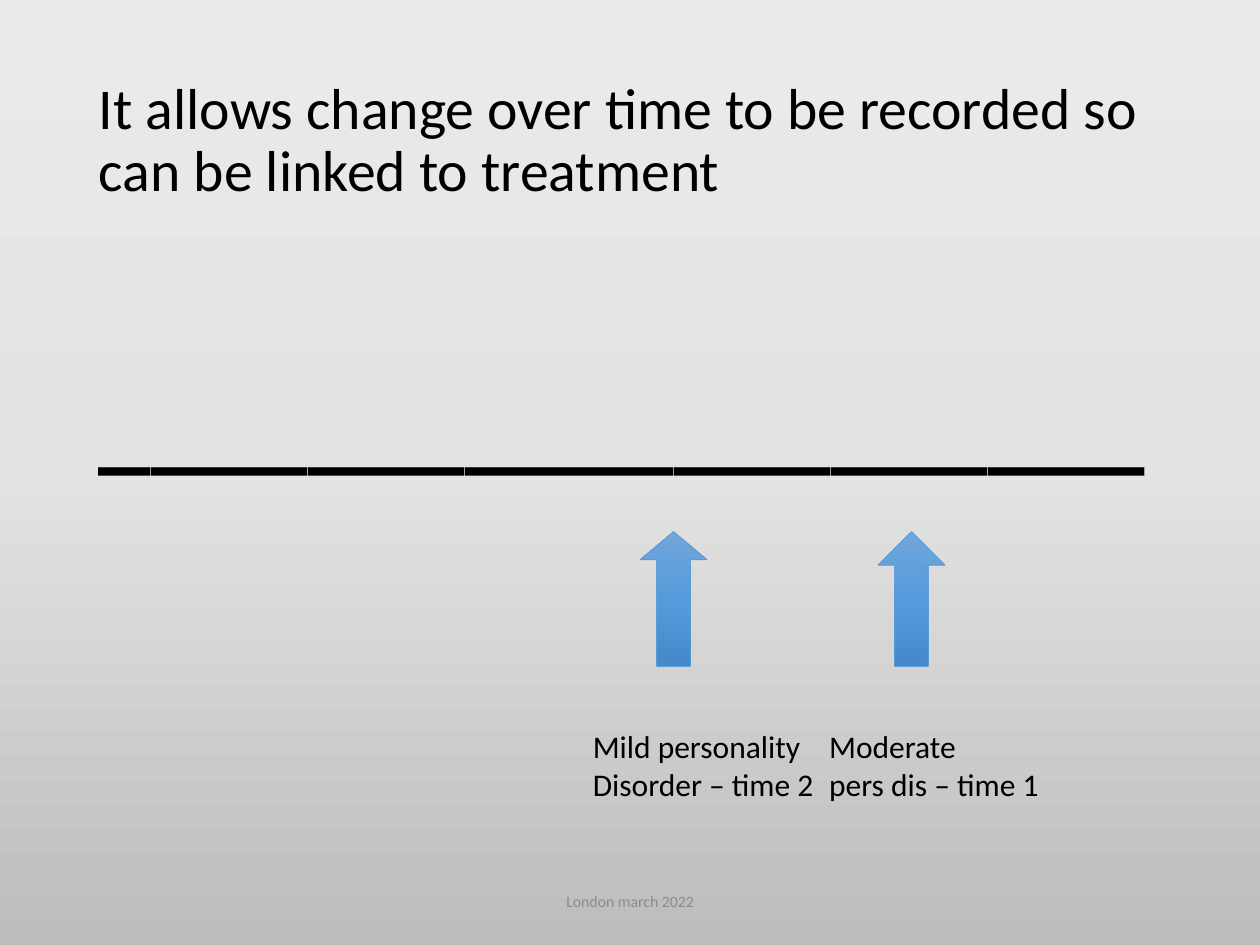
import copy
from dataclasses import dataclass

import pptx
import pptx.dml.color
import pptx.enum.shapes
import pptx.enum.text
import pptx.oxml
import pptx.oxml.ns
import pptx.util

Pt = pptx.util.Pt
ALIGN = pptx.enum.text.PP_ALIGN
ANCHOR = pptx.enum.text.MSO_ANCHOR
FONT = "Calibri"
HUES = {"text": "000000", "foot": "8C8C8C", "edge": "5B9BD5"}
FADES = {
    "page": ("EBEAEA", "E4E3E3", "BDBCBC"),
    "arrow": ("71A6DB", "559BDB", "448ACA"),
}


@dataclass
class Arrow:
    left: float
    head: float


ARROWS = [Arrow(501.8, 0.5), Arrow(365.8, 0.42)]


def rgb(code: str) -> pptx.dml.color.RGBColor:
    return pptx.dml.color.RGBColor.from_string(code)


def fade(fill, node, hues: tuple) -> None:
    """Fill from top to bottom with evenly spaced hues."""
    fill.gradient()
    fill.gradient_angle = 270
    stops = node.find(".//" + pptx.oxml.ns.qn("a:gsLst"))
    while len(stops) < len(hues):
        stops.append(copy.deepcopy(stops[-1]))
    for i, (stop, hue) in enumerate(zip(fill.gradient_stops, hues)):
        stop.position = i / (len(hues) - 1)
        stop.color.rgb = rgb(hue)


def write(slide, box: tuple, text: str, *, size: float, hue: str = "text",
          bold: bool = False, align=ALIGN.LEFT, anchor=ANCHOR.TOP,
          space: float = 1, top: float = 3.6, wrap: bool = True,
          tab: float = 0) -> None:
    """Add a text box; each line of text is a paragraph."""
    frame = slide.shapes.add_textbox(*map(Pt, box)).text_frame
    frame.word_wrap = wrap
    frame.vertical_anchor = anchor
    frame.margin_top = Pt(top)
    frame.text = text
    for para in frame.paragraphs:
        para.alignment = align
        para.line_spacing = space
        font = para.runs[0].font
        font.name, font.size, font.bold = FONT, Pt(size), bold
        font.color.rgb = rgb(HUES[hue])
        if tab:
            space_ns = pptx.oxml.ns.nsdecls("a")
            para._p.get_or_add_pPr().append(pptx.oxml.parse_xml(
                f'<a:tabLst {space_ns}><a:tab pos="{Pt(tab)}" algn="l"/></a:tabLst>'))


def point(slide, arrow: Arrow) -> None:
    """Add an arrow that points up at the scale."""
    shape = slide.shapes.add_shape(
        pptx.enum.shapes.MSO_SHAPE.UP_ARROW,
        Pt(arrow.left), Pt(303.8), Pt(38.2), Pt(77))
    shape.adjustments[1] = arrow.head
    shape.shadow.inherit = False
    fade(shape.fill, shape._element, FADES["arrow"])
    shape.line.color.rgb = rgb(HUES["edge"])
    shape.line.width = Pt(0.5)


def main() -> None:
    deck = pptx.Presentation()
    deck.slide_width, deck.slide_height = Pt(720), Pt(540)
    slide = deck.slides.add_slide(deck.slide_layouts[6])
    fade(slide.background.fill, slide._element, FADES["page"])

    # Title
    write(slide, (49.5, 28.8, 621, 104.4),
          "It allows change over time to be recorded so can be linked to treatment",
          size=33, anchor=ANCHOR.MIDDLE, space=0.9)

    # Scale
    write(slide, (49.5, 144, 621, 342.7), "_" * 20,
          size=60, bold=True, space=0.9, top=68)

    # Footer
    write(slide, (238.5, 500.5, 243, 28.8), "London march 2022",
          size=9, hue="foot", align=ALIGN.CENTER, anchor=ANCHOR.MIDDLE)

    # Arrows and their labels
    for arrow in ARROWS:
        point(slide, arrow)
    write(slide, (331.7, 411.8, 275.8, 50.9),
          "Mild personality\tModerate\nDisorder – time 2\tpers dis – time 1",
          size=18, wrap=False, tab=135)

    deck.save("out.pptx")


if __name__ == "__main__":
    main()
